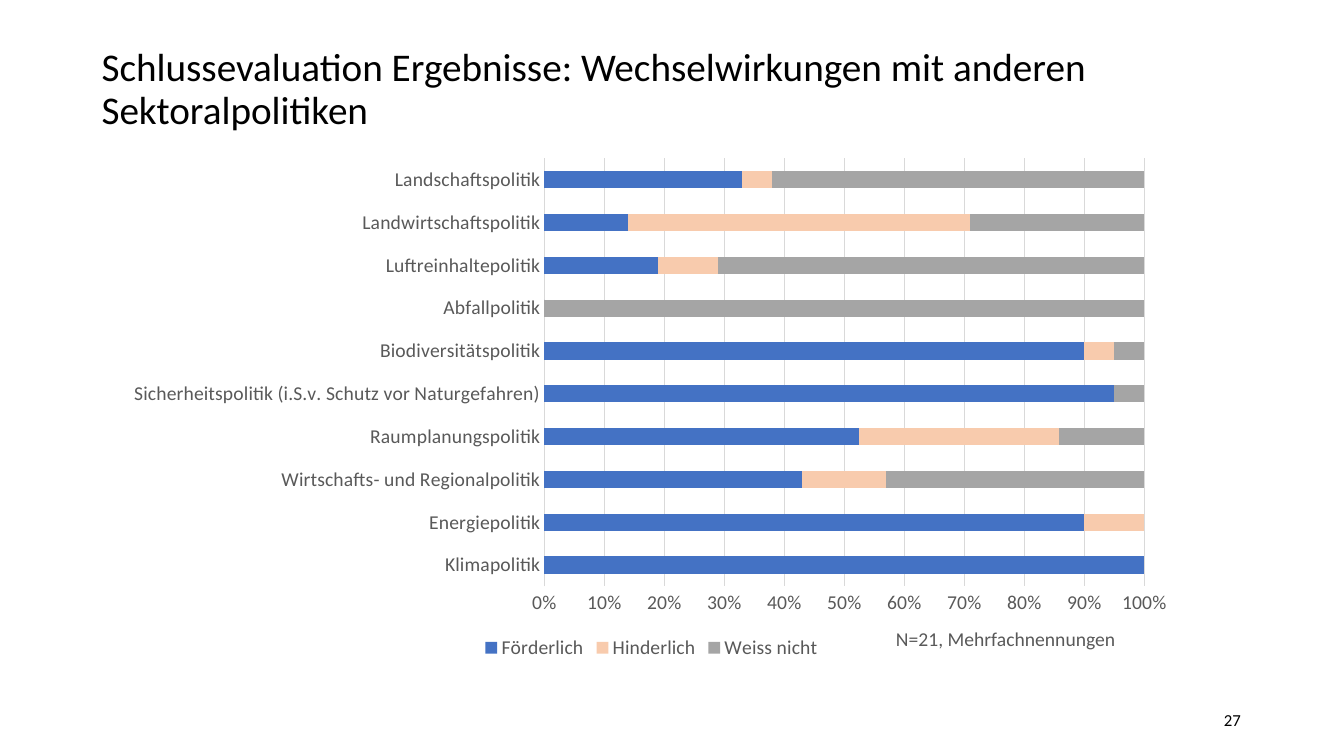
"""Builds the slide on interactions with other sectoral policies."""
from dataclasses import dataclass

import lxml.etree
import pptx
import pptx.chart.data
import pptx.dml.color
import pptx.enum.chart
import pptx.enum.text
import pptx.oxml.ns
import pptx.util

Cm = pptx.util.Cm
Pt = pptx.util.Pt
ANCHOR = pptx.enum.text.MSO_ANCHOR
ALIGN = pptx.enum.text.PP_ALIGN

TITLE = "Schlussevaluation Ergebnisse: Wechselwirkungen mit anderen Sektoralpolitiken"
NOTE = "N=21, Mehrfachnennungen"
PAGE_NUMBER = "27"
SERIES = ("Förderlich", "Hinderlich", "Weiss nicht")
POLICIES = [
    ("Klimapolitik", 100, 0, 0),
    ("Energiepolitik", 90, 10, 0),
    ("Wirtschafts- und Regionalpolitik", 43, 14, 43),
    ("Raumplanungspolitik", 52, 33, 14),
    ("Sicherheitspolitik (i.S.v. Schutz vor Naturgefahren)", 95, 0, 5),
    ("Biodiversitätspolitik", 90, 5, 5),
    ("Abfallpolitik", 0, 0, 100),
    ("Luftreinhaltepolitik", 19, 10, 71),
    ("Landwirtschaftspolitik", 14, 57, 29),
    ("Landschaftspolitik", 33, 5, 62),
]
BOXES = {
    "title": (2.31, 0.91, 29.21, 2.74),
    "chart": (2.92, 3.73, 27, 13),
    "note": (22.33, 15.67, 10.9, 0.86),
    "number": (23.9, 17.63, 7.62, 1.02),
}
PLOT_LAYOUT = {"x": 0.4, "y": 0.02, "w": 0.56, "h": 0.83}


@dataclass(frozen=True)
class Theme:
    font: str = "Calibri"
    text: str = "000000"
    muted: str = "595959"
    grid: str = "D9D9D9"
    series: tuple = ("4472C4", "F8CBAD", "A5A5A5")
    title_size: int = 28
    body_size: int = 14
    number_size: int = 12


THEME = Theme()


def color(value):
    """Returns the colour object for a hex value."""
    return pptx.dml.color.RGBColor.from_string(value)


def box(name):
    """Returns the position and size of a named part."""
    return [Cm(length) for length in BOXES[name]]


def style_font(font, size, value):
    """Applies the theme font with a size and colour."""
    font.name = THEME.font
    font.size = Pt(size)
    font.color.rgb = color(value)


def style_line(line, value):
    """Applies a thin solid line."""
    line.color.rgb = color(value)
    line.width = Pt(0.75)


def add_text(slide, name, text, size, value, anchor=ANCHOR.MIDDLE, align=ALIGN.LEFT, spacing=1.0):
    """Adds a wrapped text box."""
    frame = slide.shapes.add_textbox(*box(name)).text_frame
    frame.word_wrap = True
    frame.vertical_anchor = anchor
    frame.text = text
    paragraph = frame.paragraphs[0]
    paragraph.alignment = align
    paragraph.line_spacing = spacing
    style_font(paragraph.runs[0].font, size, value)


def place_plot(chart):
    """Fixes the inner plot area as fractions of the chart."""
    qn = pptx.oxml.ns.qn
    plot_area = chart.plots[0]._element.getparent()
    for old in plot_area.findall(qn("c:layout")):
        plot_area.remove(old)
    layout = lxml.etree.Element(qn("c:layout"))
    plot_area.insert(0, layout)
    manual = lxml.etree.SubElement(layout, qn("c:manualLayout"))
    settings = [("layoutTarget", "inner"), ("xMode", "edge"), ("yMode", "edge")]
    for tag, value in settings + list(PLOT_LAYOUT.items()):
        lxml.etree.SubElement(manual, qn("c:" + tag)).set("val", str(value))


def add_policy_chart(slide):
    """Adds the stacked bar chart of policy ratings."""
    categories, *columns = zip(*POLICIES)
    data = pptx.chart.data.CategoryChartData()
    data.categories = categories
    for name, values in zip(SERIES, columns):
        data.add_series(name, values)
    kind = pptx.enum.chart.XL_CHART_TYPE.BAR_STACKED_100
    chart = slide.shapes.add_chart(kind, *box("chart"), data).chart
    chart.has_title = False
    style_font(chart.font, THEME.body_size, THEME.text)

    plot = chart.plots[0]
    plot.gap_width = 150
    plot.overlap = 100
    plot.vary_by_categories = False
    for series, value in zip(plot.series, THEME.series):
        series.format.fill.solid()
        series.format.fill.fore_color.rgb = color(value)

    for axis in (chart.category_axis, chart.value_axis):
        axis.major_tick_mark = pptx.enum.chart.XL_TICK_MARK.NONE
        axis.minor_tick_mark = pptx.enum.chart.XL_TICK_MARK.NONE
        style_font(axis.tick_labels.font, THEME.body_size, THEME.muted)
    chart.category_axis.has_major_gridlines = False
    style_line(chart.category_axis.format.line, THEME.grid)

    percent_axis = chart.value_axis
    percent_axis.minimum_scale = 0
    percent_axis.maximum_scale = 1
    percent_axis.major_unit = 0.1
    percent_axis.has_major_gridlines = True
    style_line(percent_axis.major_gridlines.format.line, THEME.grid)
    percent_axis.format.line.fill.background()
    percent_axis.tick_labels.number_format = "0%"
    percent_axis.tick_labels.number_format_is_linked = False

    chart.has_legend = True
    chart.legend.position = pptx.enum.chart.XL_LEGEND_POSITION.BOTTOM
    chart.legend.include_in_layout = False
    style_font(chart.legend.font, THEME.body_size, THEME.muted)
    place_plot(chart)


def main():
    """Creates and saves the presentation."""
    presentation = pptx.Presentation()
    presentation.slide_width = Cm(33.87)
    presentation.slide_height = Cm(19.05)
    slide = presentation.slides.add_slide(presentation.slide_layouts[6])
    add_text(slide, "title", TITLE, THEME.title_size, THEME.text, spacing=0.9)
    add_policy_chart(slide)
    add_text(slide, "note", NOTE, THEME.body_size, THEME.muted, anchor=ANCHOR.TOP)
    add_text(slide, "number", PAGE_NUMBER, THEME.number_size, THEME.text, align=ALIGN.RIGHT)
    presentation.save("out.pptx")


if __name__ == "__main__":
    main()
